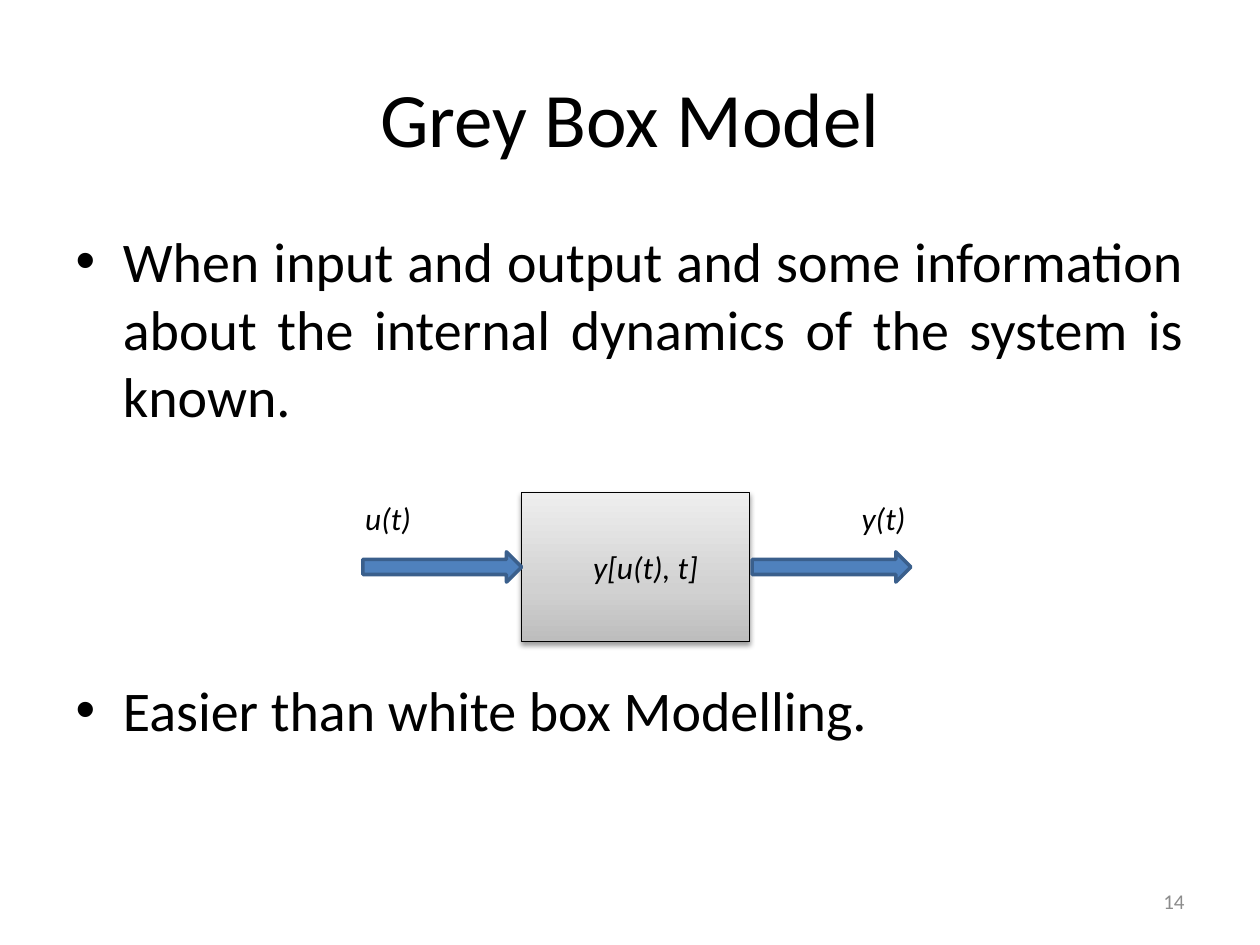
from lxml.etree import SubElement
from pptx import Presentation
from pptx.dml.color import RGBColor
from pptx.enum.shapes import MSO_SHAPE as Shape
from pptx.enum.text import MSO_ANCHOR as Anchor, MSO_AUTO_SIZE as AutoSize, PP_ALIGN as Align
from pptx.oxml import parse_xml
from pptx.oxml.ns import nsdecls, qn
from pptx.util import Inches, Pt

BLACK = RGBColor(0x00, 0x00, 0x00)
GREY = RGBColor(0x8C, 0x8C, 0x8C)
BLUE = RGBColor(0x4F, 0x81, 0xBD)
DARK_BLUE = RGBColor(0x3A, 0x5F, 0x8C)
BOX_STOPS = [(0, "BDBDBD"), (35, "D1D1D1"), (100, "EEEEEE")]

TITLE = "Grey Box Model"
BULLETS = [
    ("When input and output and some information about the internal dynamics "
     "of the system is known.", Align.JUSTIFY, None),
    ("Easier than white box Modelling.", Align.LEFT, Pt(141)),
]
LABELS = [
    ("u(t)", (2.8, 3.91, 0.57, 0.4)),
    ("y(t)", (6.74, 3.91, 0.55, 0.4)),
    ("y[u(t), t]", (4.61, 4.3, 1.04, 0.4)),
]
PAGE_NUMBER = "14"
BOX = (4.14, 3.91, 1.81, 1.18)
ARROW_WIDTH, ARROW_HEIGHT = 1.26, 0.24


def place(shape, area):
    shape.left, shape.top, shape.width, shape.height = map(Inches, area)


def write(paragraph, text, size=18, color=BLACK, align=None, italic=None, before=None):
    run = paragraph.add_run()
    run.text = text
    run.font.name = "Calibri"
    run.font.size = Pt(size)
    run.font.color.rgb = color
    run.font.italic = italic
    paragraph.alignment = align
    if before is not None:
        paragraph.space_before = before


def add_text(slide, text, area, wrap=False, anchor=Anchor.TOP, **style):
    frame = slide.shapes.add_textbox(*map(Inches, area)).text_frame
    frame.word_wrap = wrap
    frame.vertical_anchor = anchor
    frame.auto_size = AutoSize.NONE if wrap else AutoSize.SHAPE_TO_FIT_TEXT
    write(frame.paragraphs[0], text, **style)


def add_outlined(shapes, kind, area, line_color, line_width):
    shape = shapes.add_shape(kind, *map(Inches, area))
    shape.shadow.inherit = False
    shape.line.color.rgb = line_color
    shape.line.width = Pt(line_width)
    return shape


def add_box(shapes):
    box = add_outlined(shapes, Shape.RECTANGLE, BOX, BLACK, 0.75)
    box.fill.gradient()
    box.fill.gradient_angle = 90
    stops = box._element.spPr.find(".//" + qn("a:gsLst"))
    stops.clear()
    for position, color in BOX_STOPS:
        stop = SubElement(stops, qn("a:gs"), pos=str(position * 1000))
        SubElement(stop, qn("a:srgbClr"), val=color)
    effects = box._element.spPr.find(qn("a:effectLst"))
    effects.append(parse_xml(
        f'<a:outerShdw {nsdecls("a")} blurRad="{Pt(3.1)}" dist="{Pt(1.6)}" dir="5400000" '
        'rotWithShape="0"><a:srgbClr val="000000"><a:alpha val="38000"/></a:srgbClr></a:outerShdw>'))


def add_diagram(slide):
    shapes = slide.shapes.add_group_shape().shapes
    add_box(shapes)
    left, top, width, height = BOX
    arrow_top = top + (height - ARROW_HEIGHT) / 2
    for arrow_left in (left - ARROW_WIDTH, left + width + 0.02):
        area = (arrow_left, arrow_top, ARROW_WIDTH, ARROW_HEIGHT)
        arrow = add_outlined(shapes, Shape.RIGHT_ARROW, area, DARK_BLUE, 2)
        arrow.fill.solid()
        arrow.fill.fore_color.rgb = BLUE
    for text, area in LABELS:
        add_text(slide, text, area, italic=True)


def main():
    presentation = Presentation()
    presentation.slide_width, presentation.slide_height = Inches(10), Inches(7.5)
    slide = presentation.slides.add_slide(presentation.slide_layouts[1])

    title, body = slide.placeholders
    place(title, (0.5, 0.3, 9, 1.25))
    title.text_frame.vertical_anchor = Anchor.MIDDLE
    write(title.text_frame.paragraphs[0], TITLE, size=44, align=Align.CENTER)

    place(body, (0.5, 1.75, 9, 4.95))
    frame = body.text_frame
    frame.auto_size = AutoSize.NONE
    for index, (text, align, before) in enumerate(BULLETS):
        paragraph = frame.add_paragraph() if index else frame.paragraphs[0]
        write(paragraph, text, size=32, align=align, before=before)

    add_diagram(slide)
    add_text(slide, PAGE_NUMBER, (7.17, 6.95, 2.33, 0.4), wrap=True,
             anchor=Anchor.MIDDLE, size=12, color=GREY, align=Align.RIGHT)
    presentation.save("out.pptx")


if __name__ == "__main__":
    main()
